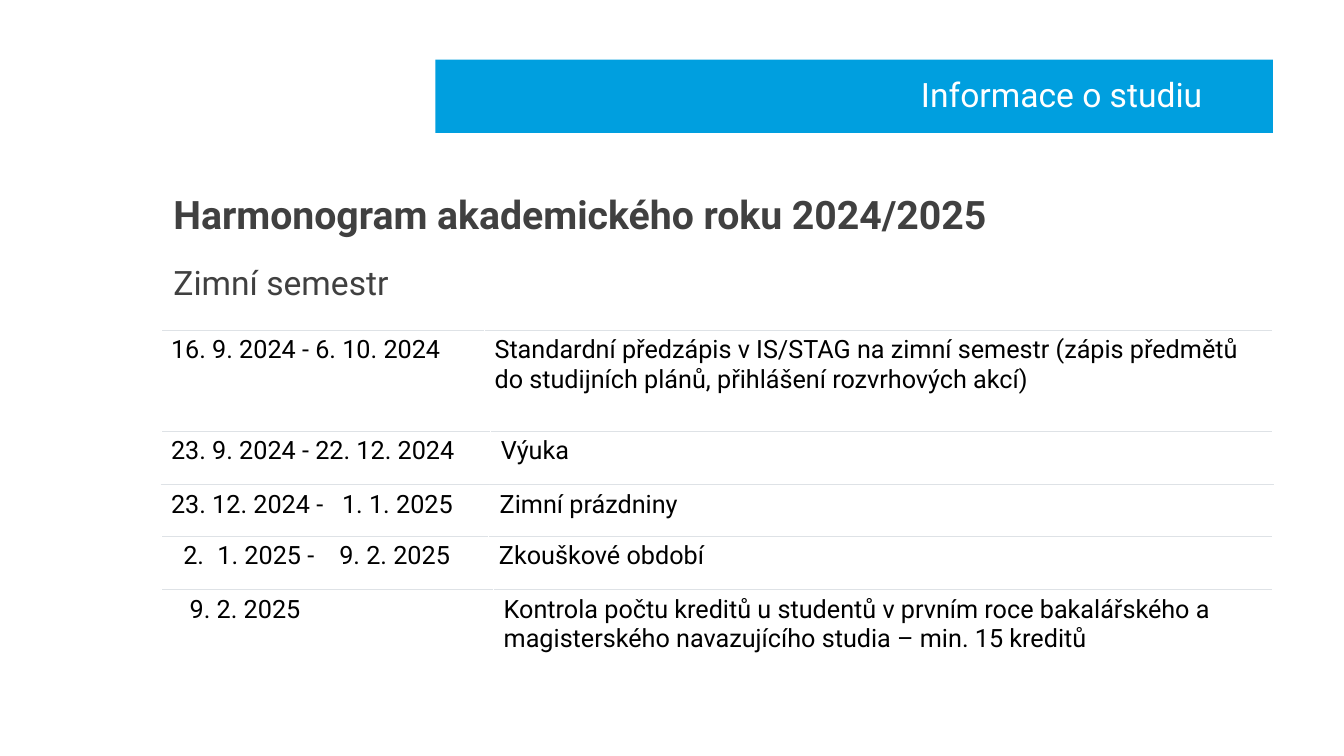
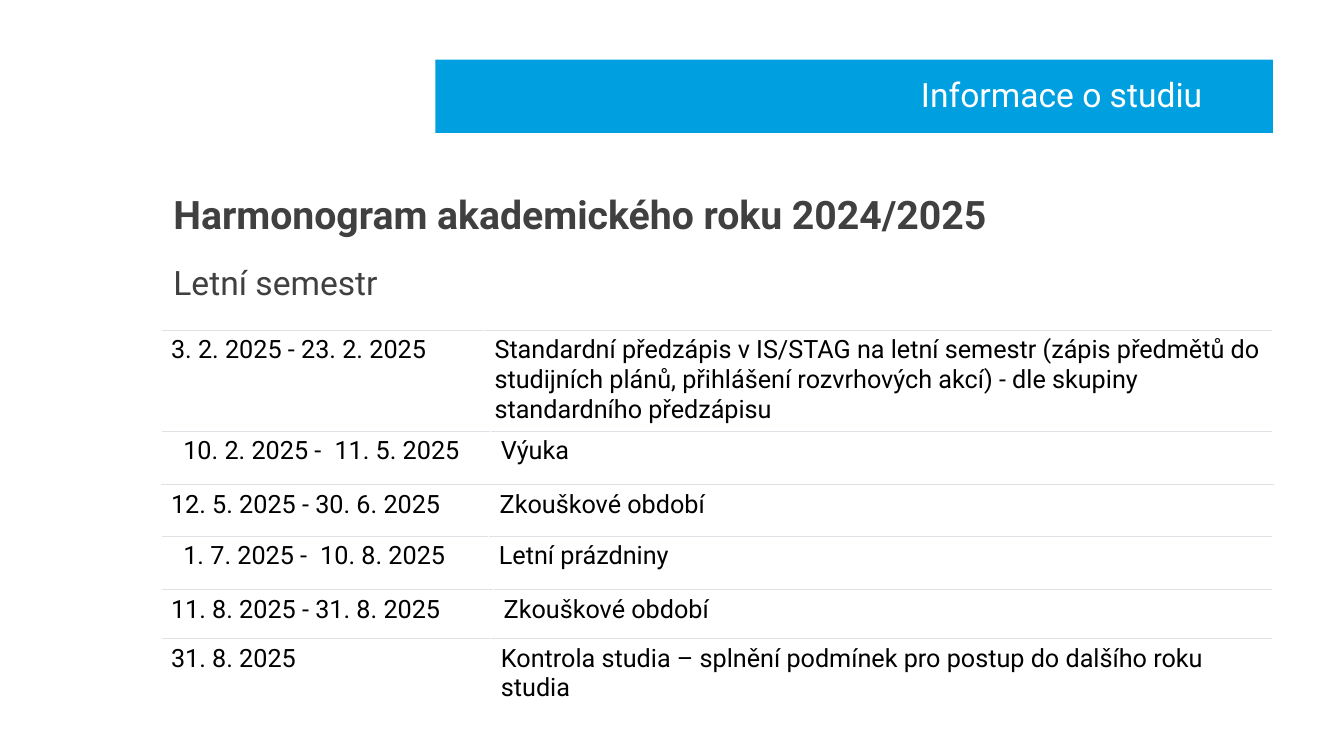
from dataclasses import dataclass

import pptx
import pptx.dml.color
import pptx.enum.text
import pptx.oxml
import pptx.oxml.ns
import pptx.util
from pptx.util import Cm, Pt


@dataclass(frozen=True)
class Theme:
    font: str = "Roboto"
    band: str = "009FDF"
    white: str = "FFFFFF"
    heading: str = "404040"
    text: str = "000000"
    rule: str = "DEE2E6"
    heading_size: int = 28
    title_size: int = 24
    table_size: int = 18


@dataclass(frozen=True)
class Slot:
    """Place of one schedule row, in centimetres."""
    top: float
    date_width: float
    height: float = 1.02


@dataclass(frozen=True)
class Event:
    """One schedule row; indent and tab stops, in centimetres, align the date."""
    date: str
    label: str
    indent: float = 0
    tabs: tuple[float, ...] = ()


@dataclass(frozen=True)
class Semester:
    name: str
    events: tuple[Event, ...]


THEME = Theme()
TITLE = "Informace o studiu"
HEADING = "Harmonogram akademického roku 2024/2025"
TABLE_LEFT, TABLE_WIDTH = 4.06, 28.02
CELL_MARGIN = 0.25
SLOTS = (
    Slot(8.33, 8.15, 2.11),
    Slot(10.87, 8.31),
    Slot(12.22, 8.28),
    Slot(13.51, 8.26),
    Slot(14.86, 8.38),
    Slot(16.1, 8.31),
)
SEMESTERS = (
    Semester("Zimní semestr", (
        Event("16. 9. 2024 - 6. 10. 2024",
              "Standardní předzápis v IS/STAG na zimní semestr (zápis předmětů "
              "do studijních plánů, přihlášení rozvrhových akcí)"),
        Event("23. 9. 2024 - 22. 12. 2024", "Výuka"),
        Event("23. 12. 2024 -\t1. 1. 2025", "Zimní prázdniny", tabs=(4.31,)),
        Event("2.\t1. 2025 -\t9. 2. 2025", "Zkouškové období", 0.31, (0.86, 3.93)),
        Event("9. 2. 2025",
              "Kontrola počtu kreditů u studentů v prvním roce bakalářského "
              "a magisterského navazujícího studia – min. 15 kreditů", 0.47),
    )),
    Semester("Letní semestr", (
        Event("3. 2. 2025 - 23. 2. 2025",
              "Standardní předzápis v IS/STAG na letní semestr (zápis předmětů do "
              "studijních plánů, přihlášení rozvrhových akcí) - dle skupiny "
              "standardního předzápisu"),
        Event("10. 2. 2025 -\t11. 5. 2025", "Výuka", 0.31, (3.81,)),
        Event("12. 5. 2025 - 30. 6. 2025", "Zkouškové období"),
        Event("1. 7. 2025 -\t10. 8. 2025", "Letní prázdniny", 0.31, (3.45,)),
        Event("11. 8. 2025 - 31. 8. 2025", "Zkouškové období"),
        Event("31. 8. 2025",
              "Kontrola studia – splnění podmínek pro postup do dalšího roku studia"),
    )),
)


def rgb(color: str) -> pptx.dml.color.RGBColor:
    return pptx.dml.color.RGBColor.from_string(color)


def style(p, size: int, color: str, bold: bool = False) -> None:
    for r in p.runs:
        r.font.name = THEME.font
        r.font.size = Pt(size)
        r.font.bold = bold
        r.font.color.rgb = rgb(color)


def place(sp, left: float, top: float, width: float, height: float) -> None:
    sp.left, sp.top, sp.width, sp.height = map(Cm, (left, top, width, height))


def set_insets(tf, left: float, top: float, right: float, bottom: float) -> None:
    tf.margin_left, tf.margin_top = Cm(left), Cm(top)
    tf.margin_right, tf.margin_bottom = Cm(right), Cm(bottom)


def add_title(s) -> None:
    sp = s.shapes.title
    place(sp, 10.97, 1.5, 21.11, 1.85)
    sp.fill.solid()
    sp.fill.fore_color.rgb = rgb(THEME.band)
    tf = sp.text_frame
    tf.text = TITLE
    tf.auto_size = pptx.enum.text.MSO_AUTO_SIZE.NONE
    tf.vertical_anchor = pptx.enum.text.MSO_ANCHOR.MIDDLE
    set_insets(tf, 1.5, 0.13, 1.78, 0.13)
    p = tf.paragraphs[0]
    p.alignment = pptx.enum.text.PP_ALIGN.RIGHT
    p.line_spacing = 0.9
    style(p, THEME.title_size, THEME.white)


def add_headings(s, semester: str) -> None:
    sp = s.placeholders[1]
    place(sp, 4.37, 4.7, 27.71, 11.86)
    tf = sp.text_frame
    tf.text = f"{HEADING}\n{semester}"
    tf.auto_size = pptx.enum.text.MSO_AUTO_SIZE.NONE
    tf.vertical_anchor = pptx.enum.text.MSO_ANCHOR.TOP
    set_insets(tf, 0, 0, 0, 0)
    sizes = (THEME.heading_size, THEME.title_size)
    for i, (p, size) in enumerate(zip(tf.paragraphs, sizes)):
        pPr = p._p.get_or_add_pPr()
        pPr.set("marL", "0")
        pPr.set("indent", "0")
        pptx.oxml.ns.qn("a:buNone")
        pPr.append(pptx.oxml.parse_xml(
            f'<a:buNone {pptx.oxml.ns.nsdecls("a")}/>'))
        p.line_spacing = Pt(36.4)
        p.space_before = Pt(10 * i)
        style(p, size, THEME.heading, bold=i == 0)


def add_tab_stops(p, stops: tuple[float, ...]) -> None:
    tabs = "".join(f'<a:tab pos="{Cm(stop)}" algn="l"/>' for stop in stops)
    p._p.get_or_add_pPr().append(pptx.oxml.parse_xml(
        f'<a:tabLst {pptx.oxml.ns.nsdecls("a")}>{tabs}</a:tabLst>'))


def add_top_rule(cell) -> None:
    cell._tc.get_or_add_tcPr().insert(0, pptx.oxml.parse_xml(
        f'<a:lnT {pptx.oxml.ns.nsdecls("a")} w="{Pt(0.75)}"><a:solidFill>'
        f'<a:srgbClr val="{THEME.rule}"/></a:solidFill></a:lnT>'))


def add_event(s, event: Event, slot: Slot) -> None:
    frame = s.shapes.add_table(1, 2, Cm(TABLE_LEFT), Cm(slot.top),
                               Cm(TABLE_WIDTH), Cm(slot.height))
    table = frame.table
    table.first_row = table.horz_banding = False
    table.columns[0].width = Cm(slot.date_width)
    table.columns[1].width = Cm(TABLE_WIDTH - slot.date_width)
    for cell, text in zip(table.rows[0].cells, (event.date, event.label)):
        cell.fill.solid()
        cell.fill.fore_color.rgb = rgb(THEME.white)
        add_top_rule(cell)
        p = cell.text_frame.paragraphs[0]
        p.text = text
        style(p, THEME.table_size, THEME.text)
    date = table.cell(0, 0)
    date.margin_left = Cm(CELL_MARGIN + event.indent)
    if event.tabs:
        add_tab_stops(date.text_frame.paragraphs[0], event.tabs)


def main() -> None:
    prs = pptx.Presentation()
    prs.slide_width, prs.slide_height = Cm(33.87), Cm(19.05)
    for semester in SEMESTERS:
        s = prs.slides.add_slide(prs.slide_layouts[1])
        add_title(s)
        add_headings(s, semester.name)
        for event, slot in zip(semester.events, SLOTS):
            add_event(s, event, slot)
    prs.save("out.pptx")


if __name__ == "__main__":
    main()
